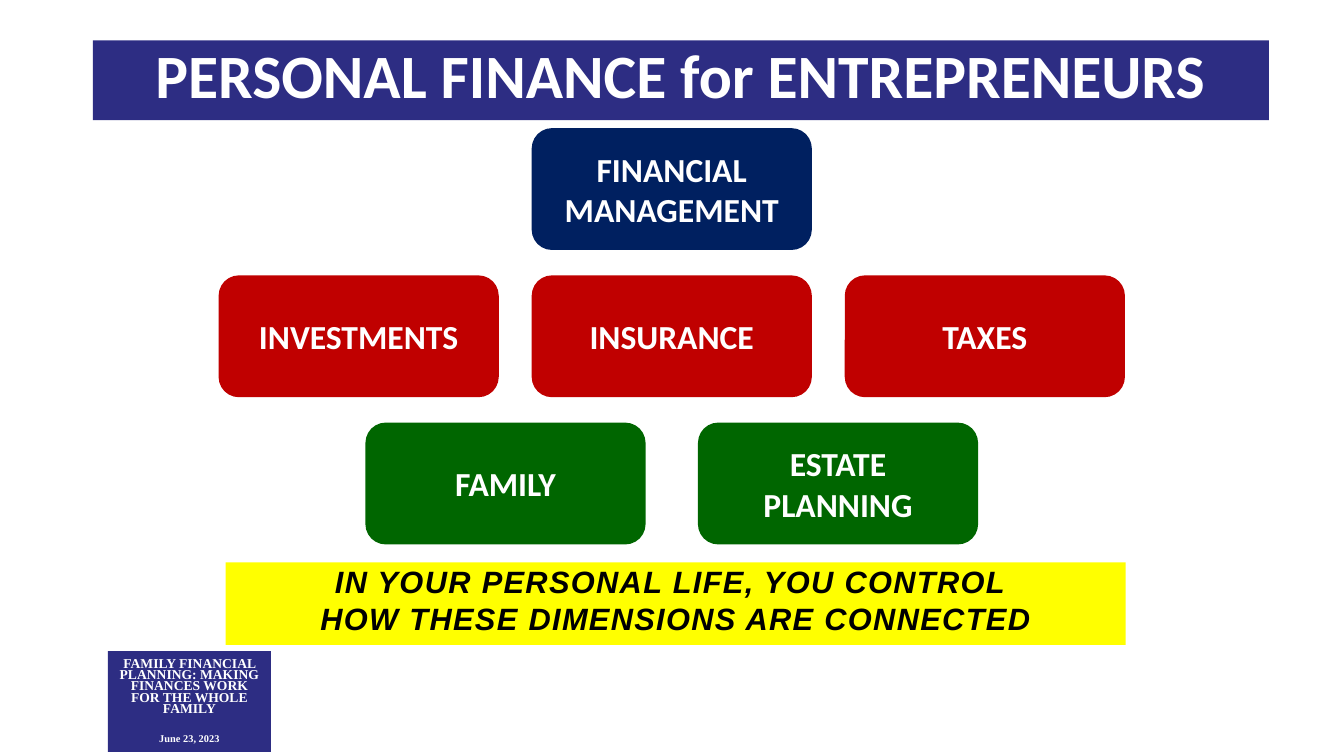
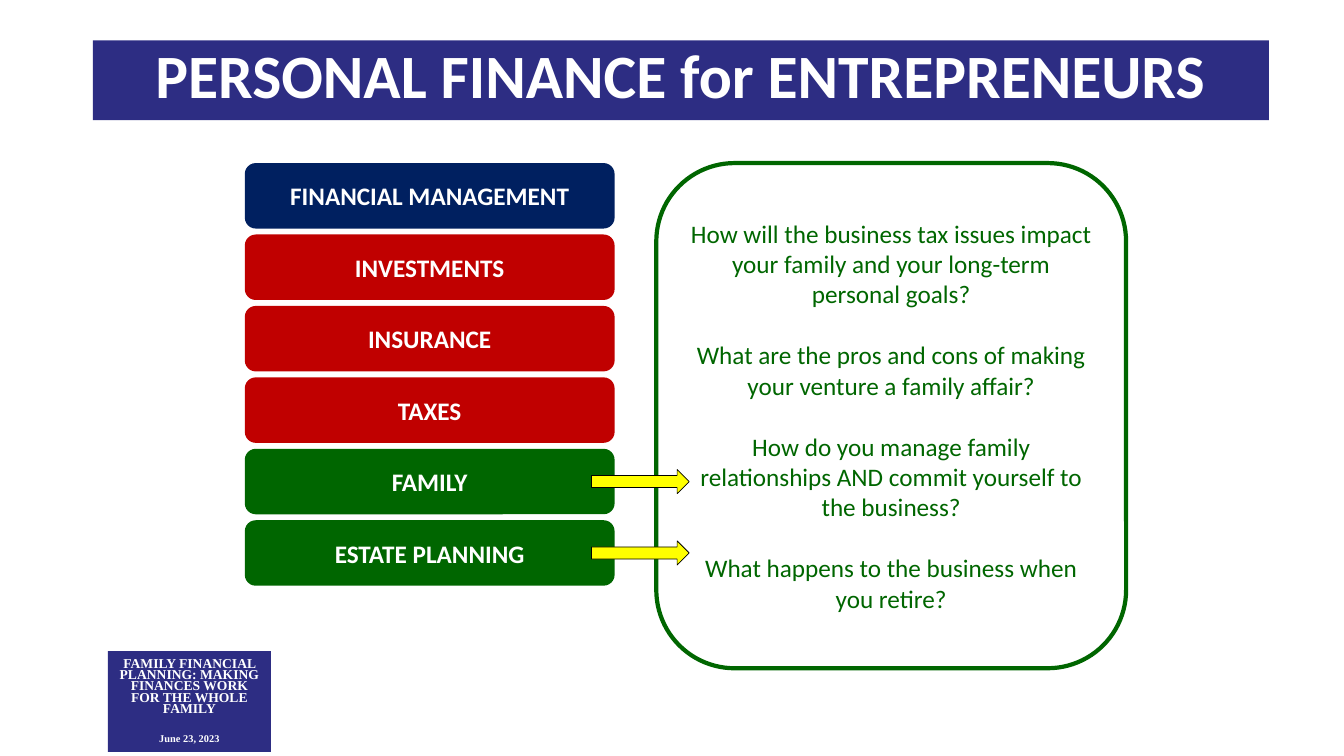
from collections import namedtuple

from pptx import Presentation
from pptx.dml.color import RGBColor
from pptx.enum.shapes import MSO_SHAPE as Kind
from pptx.enum.text import MSO_ANCHOR as Anchor, MSO_AUTO_SIZE as Fit, PP_ALIGN as Align
from pptx.util import Cm, Pt

# Colours
INDIGO = RGBColor(0x2D, 0x2D, 0x83)
NAVY = RGBColor(0x00, 0x20, 0x60)
RED = RGBColor(0xC0, 0x00, 0x00)
GREEN = RGBColor(0x00, 0x66, 0x00)
YELLOW = RGBColor(0xFF, 0xFF, 0x00)
WHITE = RGBColor(0xFF, 0xFF, 0xFF)
BLACK = RGBColor(0x00, 0x00, 0x00)

# Fonts
SANS = "Calibri"
SERIF = "Times New Roman"
WIDE = "Arial"

# Regions, in centimetres
Box = namedtuple("Box", "left top width height")
TITLE = Box(2.34, 1.02, 29.64, 2.01)
BADGE = Box(2.72, 16.41, 4.11, 2.54)
CHART = Box(5.51, 3.23, 22.84, 10.49)
BANNER = Box(5.69, 14.17, 22.68, 2.08)
STACK = Box(6.17, 4.11, 9.32, 10.65)
PANEL = Box(16.54, 4.11, 11.84, 12.73)

# Topics by tier: colour, gap between nodes, names
TIERS = [
    (NAVY, 0, ["FINANCIAL MANAGEMENT"]),
    (RED, 0.83, ["INVESTMENTS", "INSURANCE", "TAXES"]),
    (GREEN, 1.32, ["FAMILY", "ESTATE PLANNING"]),
]
ASKS = [
    "How will the business tax issues impact your family and your long-term personal goals?",
    "What are the pros and cons of making your venture a family affair?",
    "How do you manage family relationships AND commit yourself to the business?",
    "What happens to the business when you retire?",
]


def place(shape, box):
    shape.left, shape.top, shape.width, shape.height = (Cm(n) for n in box)


def paint(shape, fill, line=None, weight=0):
    shape.fill.solid()
    shape.fill.fore_color.rgb = fill
    if line is None:
        shape.line.fill.background()
    else:
        shape.line.color.rgb = line
        shape.line.width = Pt(weight)


def draw(slide, kind, box, fill, line=None, weight=0):
    shape = slide.shapes.add_shape(kind, *(Cm(n) for n in box))
    shape.shadow.inherit = False
    paint(shape, fill, line, weight)
    shape.text_frame.word_wrap = True
    shape.text_frame.vertical_anchor = Anchor.MIDDLE
    return shape


def write(para, text, size, colour, font=SANS, bold=True):
    para.alignment = Align.CENTER
    run = para.add_run()
    run.text = text
    run.font.name = font
    run.font.size = Pt(size)
    run.font.bold = bold
    run.font.color.rgb = colour
    return run


def add_node(slide, box, fill, text, size):
    node = draw(slide, Kind.ROUNDED_RECTANGLE, box, fill)
    write(node.text_frame.paragraphs[0], text, size, WHITE)


def add_title(slide, box):
    title = slide.shapes.title
    place(title, box)
    paint(title, INDIGO)
    frame = title.text_frame
    frame.auto_size = Fit.NONE
    frame.vertical_anchor = Anchor.TOP
    para = frame.paragraphs[0]
    para.line_spacing = 0.9
    write(para, "PERSONAL FINANCE for ENTREPRENEURS", 44, WHITE)


def add_badge(slide, box):
    """Build the event badge and move it to the layout all slides share."""
    badge = draw(slide, Kind.RECTANGLE, box, INDIGO)
    frame = badge.text_frame
    event, date = frame.paragraphs[0], frame.add_paragraph()
    write(event, "FAMILY FINANCIAL PLANNING: MAKING FINANCES WORK FOR THE WHOLE FAMILY",
          9.7, WHITE, SERIF)
    write(date, "June 23, 2023", 7.4, WHITE, SERIF)
    event.line_spacing = date.line_spacing = 0.7
    date.space_before = Pt(14)
    badge.element.nvSpPr.cNvPr.id = 20
    slide.slide_layout.shapes.element.append(badge.element)


def add_chart(slide, box):
    """Tiers of topics, each centred in the box."""
    wide, high = 7.06, 3.07
    pitch = (box.height - high) / (len(TIERS) - 1)
    for row, (fill, gap, names) in enumerate(TIERS):
        span = len(names) * (wide + gap) - gap
        left = box.left + (box.width - span) / 2
        for col, name in enumerate(names):
            spot = Box(left + col * (wide + gap), box.top + row * pitch, wide, high)
            add_node(slide, spot, fill, name, 24)


def add_banner(slide, box):
    banner = draw(slide, Kind.RECTANGLE, box, YELLOW)
    frame = banner.text_frame
    frame.vertical_anchor = Anchor.TOP
    frame.margin_left = frame.margin_top = frame.margin_right = frame.margin_bottom = 0
    para = frame.paragraphs[0]
    first = write(para, "IN YOUR PERSONAL LIFE, YOU CONTROL ", 22, BLACK, WIDE)
    para.add_line_break()
    last = write(para, "HOW THESE DIMENSIONS ARE CONNECTED", 22, BLACK, WIDE)
    for run in (first, last):
        run.font.italic = True
        run.font._element.set("spc", "100")  # letter spacing, 1 pt


def add_stack(slide, box):
    """All topics in one column; returns the middle height of each green one."""
    topics = [(fill, name) for fill, _, names in TIERS for name in names]
    high = 1.65
    pitch = (box.height - high) / (len(topics) - 1)
    mids = []
    for row, (fill, name) in enumerate(topics):
        top = box.top + row * pitch
        add_node(slide, Box(box.left, top, box.width, high), fill, name, 18)
        if fill == GREEN:
            mids.append(top + high / 2)
    return mids


def add_panel(slide, box):
    panel = draw(slide, Kind.ROUNDED_RECTANGLE, box, WHITE, GREEN, 3)
    frame = panel.text_frame
    for num, ask in enumerate(ASKS):
        para = frame.add_paragraph() if num else frame.paragraphs[0]
        if num:
            para.space_before = Pt(22)
        write(para, ask, 18, GREEN, bold=False)


def add_arrows(slide, box, mids):
    """Arrows that cross the right edge of the box."""
    wide, high, lap = 2.46, 0.61, 0.58
    for mid in mids:
        spot = Box(box.left + box.width - lap, mid - high / 2, wide, high)
        draw(slide, Kind.RIGHT_ARROW, spot, YELLOW, BLACK, 0.5)


def main():
    deck = Presentation()
    deck.slide_width, deck.slide_height = Cm(33.87), Cm(19.05)
    layout = deck.slide_layouts[5]
    tiers, focus = (deck.slides.add_slide(layout) for _ in range(2))
    add_badge(tiers, BADGE)
    for slide in (tiers, focus):
        add_title(slide, TITLE)

    # Overview of the topics
    add_banner(tiers, BANNER)
    add_chart(tiers, CHART)

    # Questions on family and estate
    mids = add_stack(focus, STACK)
    add_panel(focus, PANEL)
    add_arrows(focus, STACK, mids)

    deck.save("out.pptx")


if __name__ == "__main__":
    main()
